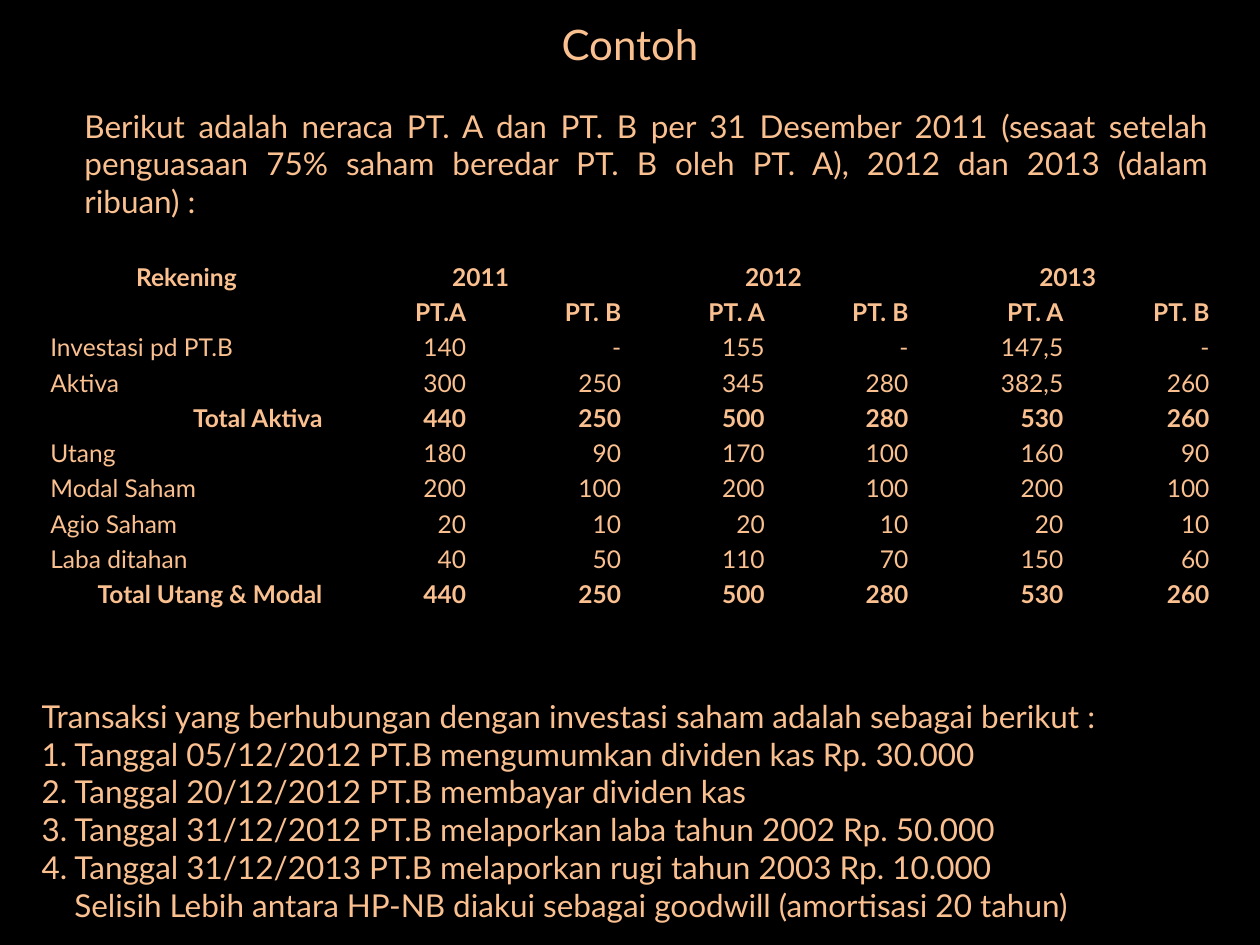
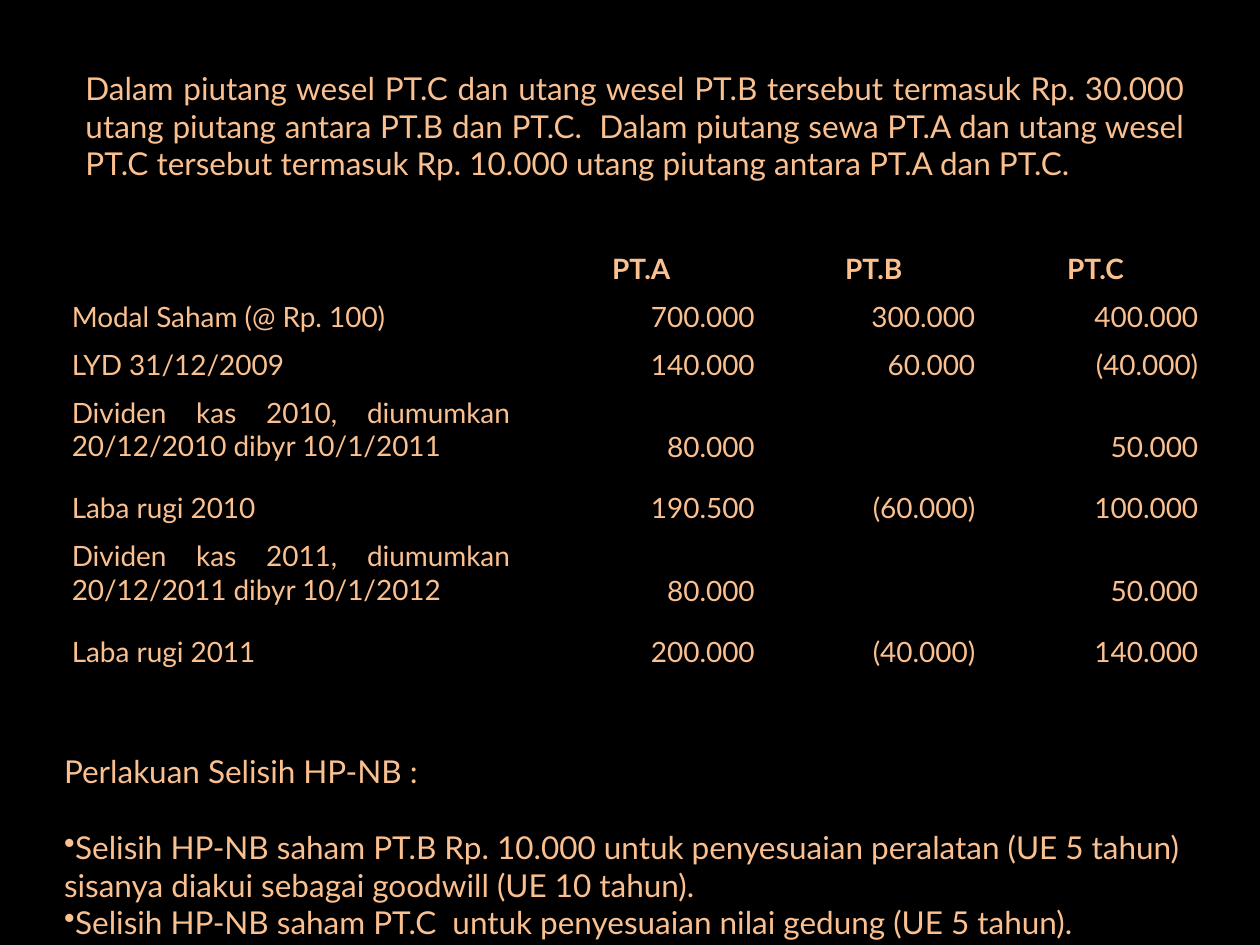
"""Build two slides on consolidated balance sheets and share investments."""
import lxml.etree
import pptx
import pptx.dml.color
import pptx.enum.text
import pptx.oxml.ns
import pptx.util

Inches = pptx.util.Inches
Pt = pptx.util.Pt
Align = pptx.enum.text.PP_ALIGN
Anchor = pptx.enum.text.MSO_ANCHOR
qn = pptx.oxml.ns.qn

COLORS = {"background": "000000", "text": "FAC090"}
FONT = "Lato"
TITLE_ONLY, BLANK = 5, 6
BODY_SIZE = 18

BALANCE_COLUMNS = [2.3, 1.14, 1.23, 1.14, 1.14, 1.23, 1.16]
BALANCE_ROWS = [
    ["Rekening", "2011", "", "2012", "", "2013", ""],
    ["", "PT.A", "PT. B", "PT. A", "PT. B", "PT. A", "PT. B"],
    ["Investasi pd PT.B", "140", "-", "155", "-", "147,5", "-"],
    ["Aktiva", "300", "250", "345", "280", "382,5", "260"],
    ["Total Aktiva", "440", "250", "500", "280", "530", "260"],
    ["Utang", "180", "90", "170", "100", "160", "90"],
    ["Modal Saham", "200", "100", "200", "100", "200", "100"],
    ["Agio Saham", "20", "10", "20", "10", "20", "10"],
    ["Laba ditahan", "40", "50", "110", "70", "150", "60"],
    ["Total Utang & Modal", "440", "250", "500", "280", "530", "260"],
]
EQUITY_COLUMNS = [3.62, 1.94, 1.75, 1.77]
EQUITY_ROWS = [
    ["", "PT.A", "PT.B", "PT.C"],
    ["Modal Saham (@ Rp. 100)", "700.000", "300.000", "400.000"],
    ["LYD 31/12/2009", "140.000", "60.000", "(40.000)"],
    ["Dividen kas 2010, diumumkan 20/12/2010 dibyr 10/1/2011", "80.000", "", "50.000"],
    ["Laba rugi 2010", "190.500", "(60.000)", "100.000"],
    ["Dividen kas 2011, diumumkan 20/12/2011 dibyr 10/1/2012", "80.000", "", "50.000"],
    ["Laba rugi 2011", "200.000", "(40.000)", "140.000"],
]
TRANSACTIONS = [
    "Transaksi yang berhubungan dengan investasi saham adalah sebagai berikut :",
    "1. Tanggal 05/12/2012 PT.B mengumumkan dividen kas Rp. 30.000",
    "2. Tanggal 20/12/2012 PT.B membayar dividen kas",
    "3. Tanggal 31/12/2012 PT.B melaporkan laba tahun 2002 Rp. 50.000",
    "4. Tanggal 31/12/2013 PT.B melaporkan rugi tahun 2003 Rp. 10.000",
    "Selisih Lebih antara HP-NB diakui sebagai goodwill (amortisasi 20 tahun)",
]
TREATMENT = [
    "Perlakuan Selisih HP-NB :",
    "Selisih HP-NB saham PT.B Rp. 10.000 untuk penyesuaian peralatan (UE 5 tahun) "
    "sisanya diakui sebagai goodwill (UE 10 tahun).",
    "Selisih HP-NB saham PT.C  untuk penyesuaian nilai gedung (UE 5 tahun).",
]


def rgb(name):
    """Return the named palette colour."""
    return pptx.dml.color.RGBColor.from_string(COLORS[name])


def write_run(paragraph, text, size, alignment, bold=False):
    """Add one run in the shared text style and align its paragraph."""
    paragraph.alignment = alignment
    run = paragraph.add_run()
    run.text = text
    run.font.name = FONT
    run.font.size = Pt(size)
    run.font.bold = bold
    run.font.color.rgb = rgb("text")


def place(shape, left, top, width, height):
    """Move and size a shape, in inches."""
    shape.left, shape.top = Inches(left), Inches(top)
    shape.width, shape.height = Inches(width), Inches(height)


def add_title(slide, text):
    """Fill and place the title placeholder."""
    title = slide.shapes.title
    place(title, 0.5, 0.08, 9, 0.53)
    title.text_frame.vertical_anchor = Anchor.MIDDLE
    write_run(title.text_frame.paragraphs[0], text, 24, Align.CENTER)


def add_text(slide, box, lines, inset=True, alignment=Align.JUSTIFY, anchor=Anchor.MIDDLE):
    """Add a wrapped text box and return its paragraphs."""
    frame = slide.shapes.add_textbox(*map(Inches, box)).text_frame
    frame.word_wrap = True
    frame.vertical_anchor = anchor
    if not inset:
        frame.margin_left = frame.margin_right = frame.margin_top = frame.margin_bottom = 0
    for index, line in enumerate(lines):
        paragraph = frame.add_paragraph() if index else frame.paragraphs[0]
        write_run(paragraph, line, BODY_SIZE, alignment)
    return frame.paragraphs


def add_bullet(paragraph):
    """Give a paragraph a round bullet."""
    properties = paragraph._p.get_or_add_pPr()
    lxml.etree.SubElement(properties, qn("a:buChar"), char="•")


def style_cell(cell):
    """Set a cell's margins, fill and borders."""
    cell.margin_left = cell.margin_right = Inches(0.07)
    cell.margin_top = cell.margin_bottom = 0
    properties = cell._tc.get_or_add_tcPr()
    for side in ("lnL", "lnR", "lnT", "lnB"):
        line = lxml.etree.SubElement(properties, qn(f"a:{side}"), w=str(Pt(1)))
        fill = lxml.etree.SubElement(line, qn("a:solidFill"))
        lxml.etree.SubElement(fill, qn("a:srgbClr"), val=COLORS["background"])
    cell.fill.background()


def add_account_table(slide, left, top, columns, heights, rows, size, header_rows):
    """Add a table with labels at left and figures at right, and return it."""
    frame = slide.shapes.add_table(
        len(rows), len(columns), Inches(left), Inches(top),
        Inches(sum(columns)), Inches(sum(heights)))
    table = frame.table
    for column, width in zip(table.columns, columns):
        column.width = Inches(width)
    for row, height in zip(table.rows, heights):
        row.height = Inches(height)
    for row_index, values in enumerate(rows):
        total = values[0].startswith("Total")
        bold = total or row_index < header_rows
        for column_index, text in enumerate(values):
            cell = table.cell(row_index, column_index)
            style_cell(cell)
            paragraph = cell.text_frame.paragraphs[0]
            if row_index == 0:
                alignment = Align.CENTER
            elif column_index or total:
                alignment = Align.RIGHT
            else:
                alignment = Align.JUSTIFY
            if text:
                write_run(paragraph, text, size, alignment, bold)
            else:
                lxml.etree.SubElement(paragraph._p, qn("a:endParaRPr"), sz=str(size * 100))
    return table


def build_balance_slide(presentation):
    """Build the balance sheet example."""
    slide = presentation.slides.add_slide(presentation.slide_layouts[TITLE_ONLY])
    add_title(slide, "Contoh")
    heights = [0.28] * 9 + [0.56]
    table = add_account_table(slide, 0.33, 2.08, BALANCE_COLUMNS, heights, BALANCE_ROWS, 14, 2)
    for first in (1, 3, 5):
        table.cell(0, first).merge(table.cell(0, first + 1))
    add_text(slide, (0.67, 0.84, 8.92, 0.91), [
        "Berikut adalah neraca PT. A dan PT. B per 31 Desember 2011 (sesaat setelah "
        "penguasaan 75% saham beredar PT. B oleh PT. A), 2012 dan 2013 (dalam ribuan) :"],
        inset=False)
    paragraphs = add_text(slide, (0.33, 5.52, 9.42, 1.82), TRANSACTIONS, inset=False)
    paragraphs[-1]._p.get_or_add_pPr().set("marL", str(Inches(0.26)))


def build_equity_slide(presentation):
    """Build the equity table and the treatment of the difference."""
    slide = presentation.slides.add_slide(presentation.slide_layouts[BLANK])
    add_text(slide, (0.58, 0.49, 8.92, 1.01), [
        "Dalam piutang wesel PT.C dan utang wesel PT.B tersebut termasuk Rp. 30.000 "
        "utang piutang antara PT.B dan PT.C.  Dalam piutang sewa PT.A dan utang wesel "
        "PT.C tersebut termasuk Rp. 10.000 utang piutang antara PT.A dan PT.C."])
    heights = [0.76 if row[0].startswith("Dividen") else 0.38 for row in EQUITY_ROWS]
    table = add_account_table(slide, 0.5, 2, EQUITY_COLUMNS, heights, EQUITY_ROWS, 16, 1)
    for row_index, row in enumerate(EQUITY_ROWS):
        if row[0].startswith("Dividen"):
            for column_index in range(1, len(row)):
                cell = table.cell(row_index, column_index)
                cell.vertical_anchor = Anchor.BOTTOM
                cell.margin_bottom = Inches(0.22)
    paragraphs = add_text(slide, (0.41, 5.92, 9.09, 1.58), TREATMENT,
                          alignment=Align.LEFT, anchor=Anchor.TOP)
    paragraphs[0].space_after = Pt(21.6)
    for paragraph in paragraphs[1:]:
        add_bullet(paragraph)


def main():
    """Build and save the presentation."""
    presentation = pptx.Presentation()
    presentation.slide_width, presentation.slide_height = Inches(10), Inches(7.5)
    background = presentation.slide_master.background.fill
    background.solid()
    background.fore_color.rgb = rgb("background")
    build_balance_slide(presentation)
    build_equity_slide(presentation)
    presentation.save("out.pptx")


if __name__ == "__main__":
    main()
